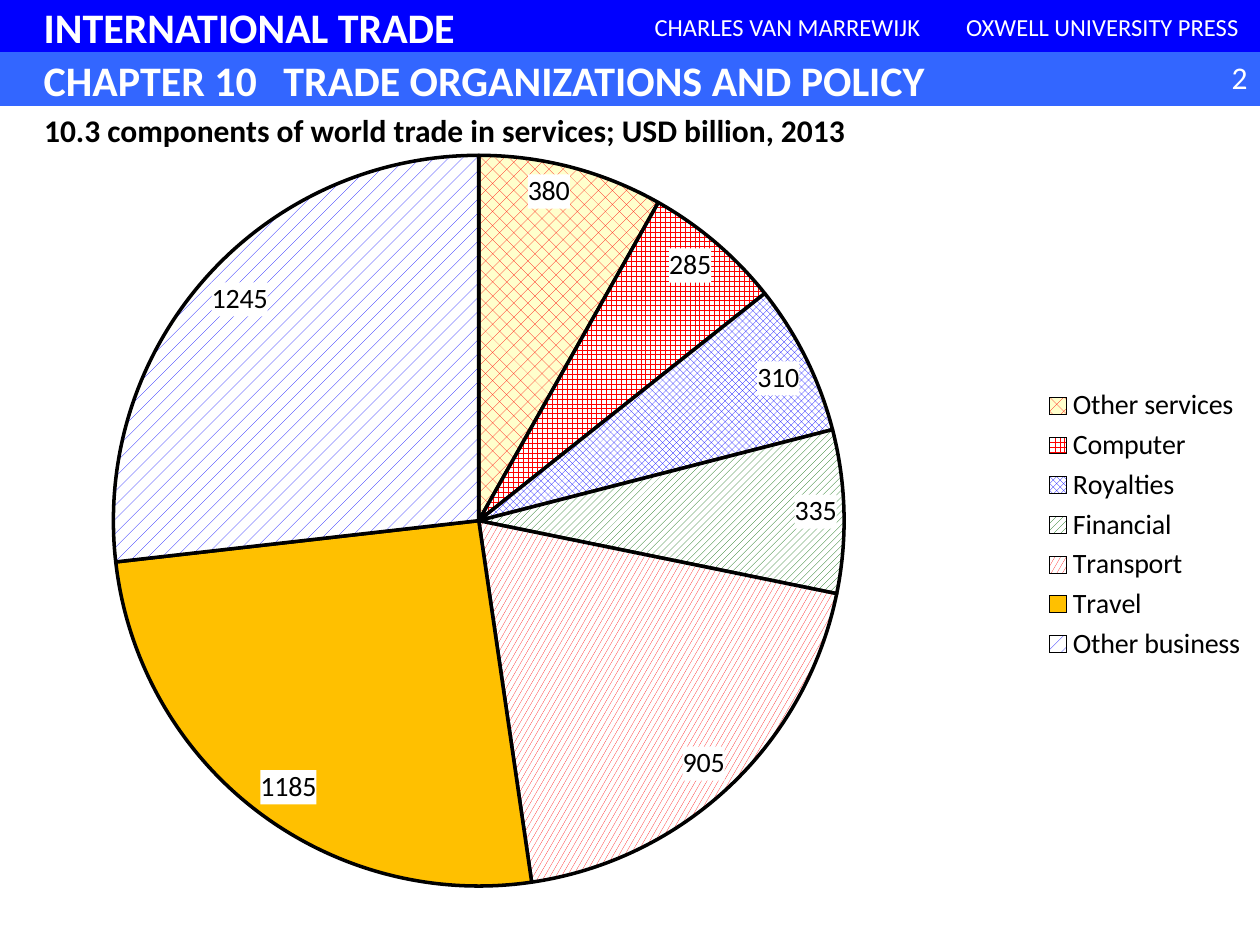
from dataclasses import dataclass

from lxml import etree
from pptx import Presentation
from pptx.chart import data as cd
from pptx.dml.color import RGBColor
from pptx.enum import chart as ch, dml, shapes, text
from pptx.oxml import ns
from pptx.util import Pt

FONT = "Calibri"
BLUE, SKY, WHITE, BLACK = "0000FF", "3366FF", "FFFFFF", "000000"
LEFT, MID, RIGHT = text.PP_ALIGN.LEFT, text.PP_ALIGN.CENTER, text.PP_ALIGN.RIGHT
PAT = dml.MSO_PATTERN
BAND = 30.24


@dataclass
class Band:
    words: str
    left: float
    top: float
    width: float
    fill: str
    size: float = 14
    bold: bool = False
    align: text.PP_ALIGN = MID
    inset: float = 7.2


@dataclass
class Wedge:
    name: str
    value: int
    fore: str
    back: str = WHITE
    pattern: PAT | None = None


BANDS = [
    Band("INTERNATIONAL TRADE", 0, 0, 720, BLUE, 24, True, LEFT, 25),
    Band("CHARLES VAN MARREWIJK", 360, 0, 180, BLUE),
    Band("OXWELL UNIVERSITY PRESS", 540, 0, 180, BLUE),
    Band("CHAPTER 10\tTRADE ORGANIZATIONS AND POLICY", 0, BAND, 720, SKY, 24, True, LEFT, 25),
]

WEDGES = [
    Wedge("Other services", 380, "FF0000", "FFFFCC", PAT.PERCENT_25),
    Wedge("Computer", 285, "FF0000", pattern=PAT.LARGE_GRID),
    Wedge("Royalties", 310, "0000FF", pattern=PAT.SOLID_DIAMOND),
    Wedge("Financial", 335, "006600", pattern=PAT.WIDE_UPWARD_DIAGONAL),
    Wedge("Transport", 905, "FF0000", pattern=PAT.LARGE_CONFETTI),
    Wedge("Travel", 1185, "FFC000"),
    Wedge("Other business", 1245, "0000FF", pattern=PAT.PERCENT_10),
]


def paint(color, code: str) -> None:
    color.rgb = RGBColor.from_string(code)


def style(font, size: float, code: str, bold: bool = False) -> None:
    font.name, font.size, font.bold = FONT, Pt(size), bold
    paint(font.color, code)


def write(frame, words: str, size: float, code: str, bold: bool, align) -> None:
    para = frame.paragraphs[0]
    para.alignment = align
    run = para.add_run()
    run.text = words
    style(run.font, size, code, bold)


def set_tab(para, pos: float) -> None:
    tabs = etree.SubElement(para._p.get_or_add_pPr(), ns.qn("a:tabLst"))
    etree.SubElement(tabs, ns.qn("a:tab"), pos=str(int(Pt(pos))), algn="l")


def draw_band(slide, band: Band) -> None:
    box = slide.shapes.add_shape(
        shapes.MSO_SHAPE.RECTANGLE,
        Pt(band.left), Pt(band.top), Pt(band.width), Pt(BAND))
    box.shadow.inherit = False
    box.fill.solid()
    paint(box.fill.fore_color, band.fill)
    paint(box.line.color, band.fill)
    box.line.width = Pt(0.75)
    frame = box.text_frame
    frame.word_wrap = True
    frame.vertical_anchor = text.MSO_ANCHOR.MIDDLE
    frame.margin_left = Pt(band.inset)
    write(frame, band.words, band.size, WHITE, band.bold, band.align)
    if "\t" in band.words:
        set_tab(frame.paragraphs[0], 137)


def draw_title(slide, words: str) -> None:
    title = slide.shapes.title
    title.left, title.top, title.width, title.height = Pt(18), Pt(60), Pt(594), Pt(29)
    frame = title.text_frame
    frame.word_wrap = True
    frame.auto_size = text.MSO_AUTO_SIZE.NONE
    frame.vertical_anchor = text.MSO_ANCHOR.TOP
    write(frame, words, 18, BLACK, True, LEFT)


def draw_number(slide, words: str) -> None:
    box = slide.shapes.add_textbox(Pt(672), Pt(29.5), Pt(48), Pt(29))
    box.text_frame.word_wrap = True
    write(box.text_frame, words, 18, WHITE, False, RIGHT)


def fill_wedge(point, wedge: Wedge) -> None:
    fill = point.format.fill
    if wedge.pattern is None:
        fill.solid()
        paint(fill.fore_color, wedge.fore)
    else:
        fill.patterned()
        fill.pattern = wedge.pattern
        paint(fill.fore_color, wedge.fore)
        paint(fill.back_color, wedge.back)
    paint(point.format.line.color, BLACK)
    point.format.line.width = Pt(2)


def place_plot(chart, **spots: float) -> None:
    area = chart._chartSpace.chart.plotArea
    for old in area.findall(ns.qn("c:layout")):
        area.remove(old)
    layout = etree.Element(ns.qn("c:layout"))
    manual = etree.SubElement(layout, ns.qn("c:manualLayout"))
    modes = {"layoutTarget": "inner", "xMode": "edge", "yMode": "edge"}
    for tag, val in {**modes, **spots}.items():
        etree.SubElement(manual, ns.qn("c:" + tag), val=str(val))
    area.insert(0, layout)


def back_labels(labels, code: str) -> None:
    props = etree.Element(ns.qn("c:spPr"))
    solid = etree.SubElement(props, ns.qn("a:solidFill"))
    etree.SubElement(solid, ns.qn("a:srgbClr"), val=code)
    labels._element.find(ns.qn("c:txPr")).addprevious(props)


def draw_pie(slide, wedges: list[Wedge]) -> None:
    data = cd.CategoryChartData()
    data.categories = [w.name for w in wedges]
    data.add_series("Series 1", [w.value for w in wedges])
    chart = slide.shapes.add_chart(
        ch.XL_CHART_TYPE.PIE, Pt(0), Pt(60), Pt(720), Pt(480), data).chart
    chart.has_title = False
    style(chart.font, 10, BLACK)
    chart.has_legend = True
    chart.legend.position = ch.XL_LEGEND_POSITION.RIGHT
    chart.legend.include_in_layout = False
    style(chart.legend.font, 16, BLACK)
    place_plot(chart, x=0.09, y=0.01, w=0.58, h=0.97)
    plot = chart.plots[0]
    plot.vary_by_categories = True
    series = plot.series[0]
    for i, wedge in enumerate(wedges):
        fill_wedge(series.points[i], wedge)
    labels = series.data_labels
    labels.show_value = True
    labels.position = ch.XL_LABEL_POSITION.INSIDE_END
    style(labels.font, 16, BLACK)
    back_labels(labels, WHITE)


def main() -> None:
    deck = Presentation()
    deck.slide_width, deck.slide_height = Pt(720), Pt(540)
    slide = deck.slides.add_slide(deck.slide_layouts[5])
    for band in BANDS:
        draw_band(slide, band)
    draw_number(slide, "2")
    draw_title(slide, "10.3 components of world trade in services; USD billion, 2013")
    draw_pie(slide, WEDGES)
    deck.save("out.pptx")


if __name__ == "__main__":
    main()
